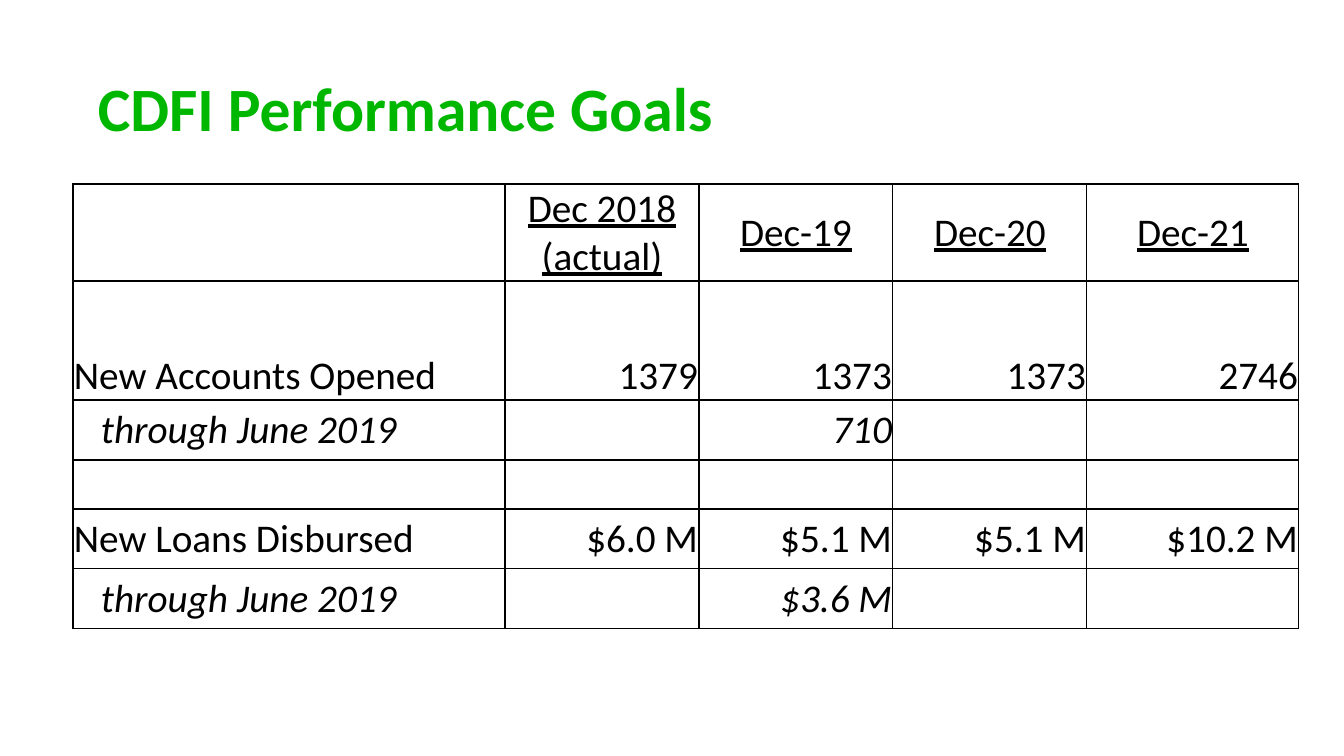
from lxml.etree import SubElement
from pptx import Presentation
from pptx.dml.color import RGBColor
from pptx.enum.text import MSO_ANCHOR as ANCHOR, PP_ALIGN as ALIGN
from pptx.oxml.ns import qn
from pptx.util import Emu, Pt

GREEN = RGBColor(0x00, 0xB7, 0x00)
BLACK = RGBColor(0x00, 0x00, 0x00)
WHITE = RGBColor(0xFF, 0xFF, 0xFF)
FONT = "Calibri"


def px(n):
    """Turn pixels, 100.8 to the inch, into EMU."""
    return Emu(round(n * 914400 / 100.8))


def add_borders(cell):
    """Draw a thin black line on all four sides of a cell."""
    tcPr = cell._tc.get_or_add_tcPr()
    for i, side in enumerate(("a:lnL", "a:lnR", "a:lnT", "a:lnB")):
        ln = SubElement(tcPr, qn(side), w=str(Pt(1)))
        fill = SubElement(ln, qn("a:solidFill"))
        SubElement(fill, qn("a:srgbClr"), val=str(BLACK))
        tcPr.insert(i, ln)


prs = Presentation()
prs.slide_width, prs.slide_height = px(1344), px(756)
s = prs.slides.add_slide(prs.slide_layouts[6])

# Title
title = s.shapes.add_textbox(px(88), px(62), px(813), px(100))
title.line.color.rgb = WHITE
title.line.width = Pt(0.75)
tf = title.text_frame
tf.word_wrap = True
tf.vertical_anchor = ANCHOR.MIDDLE
p = tf.paragraphs[0]
p.line_spacing = 0.9
r = p.add_run()
r.text = "CDFI Performance Goals"
r.font.name, r.font.size, r.font.bold = FONT, Pt(44), True
r.font.color.rgb = GREEN

# Goals table
GOALS = [
    ["", "Dec 2018 (actual)", "Dec-19", "Dec-20", "Dec-21"],
    ["New Accounts Opened", "1379", "1373", "1373", "2746"],
    ["through June 2019", "", "710", "", ""],
    ["", "", "", "", ""],
    ["New Loans Disbursed", "$6.0 M", "$5.1 M", "$5.1 M", "$10.2 M"],
    ["through June 2019", "", "$3.6 M", "", ""],
]
COL_WIDTHS = [432, 194, 194, 194, 212]
ROW_HEIGHTS = [97, 119, 60, 49, 60, 60]
HEADER_ROW, ACCOUNTS_ROW = 0, 1
TO_DATE_ROWS = (2, 5)

table = s.shapes.add_table(len(ROW_HEIGHTS), len(COL_WIDTHS), px(73), px(184),
                           px(sum(COL_WIDTHS)), px(sum(ROW_HEIGHTS))).table
table.first_row = table.horz_banding = False
for col, width in zip(table.columns, COL_WIDTHS):
    col.width = px(width)
for row, height in zip(table.rows, ROW_HEIGHTS):
    row.height = px(height)

for i, texts in enumerate(GOALS):
    for j, text in enumerate(texts):
        cell = table.cell(i, j)
        cell.fill.background()
        add_borders(cell)
        if not text:
            continue
        to_date = i in TO_DATE_ROWS
        cell.margin_left = px(28 if to_date and j == 0 else 1)
        cell.margin_right = cell.margin_top = px(1)
        cell.margin_bottom = 0
        cell.vertical_anchor = ANCHOR.BOTTOM if i == ACCOUNTS_ROW else ANCHOR.MIDDLE
        p = cell.text_frame.paragraphs[0]
        if i == HEADER_ROW:
            p.alignment = ALIGN.CENTER
        else:
            p.alignment = ALIGN.RIGHT if j else ALIGN.LEFT
        r = p.add_run()
        r.text = text
        r.font.name, r.font.size = FONT, Pt(28)
        r.font.bold = False
        r.font.italic = to_date
        r.font.underline = i == HEADER_ROW
        r.font.color.rgb = BLACK

prs.save("out.pptx")
